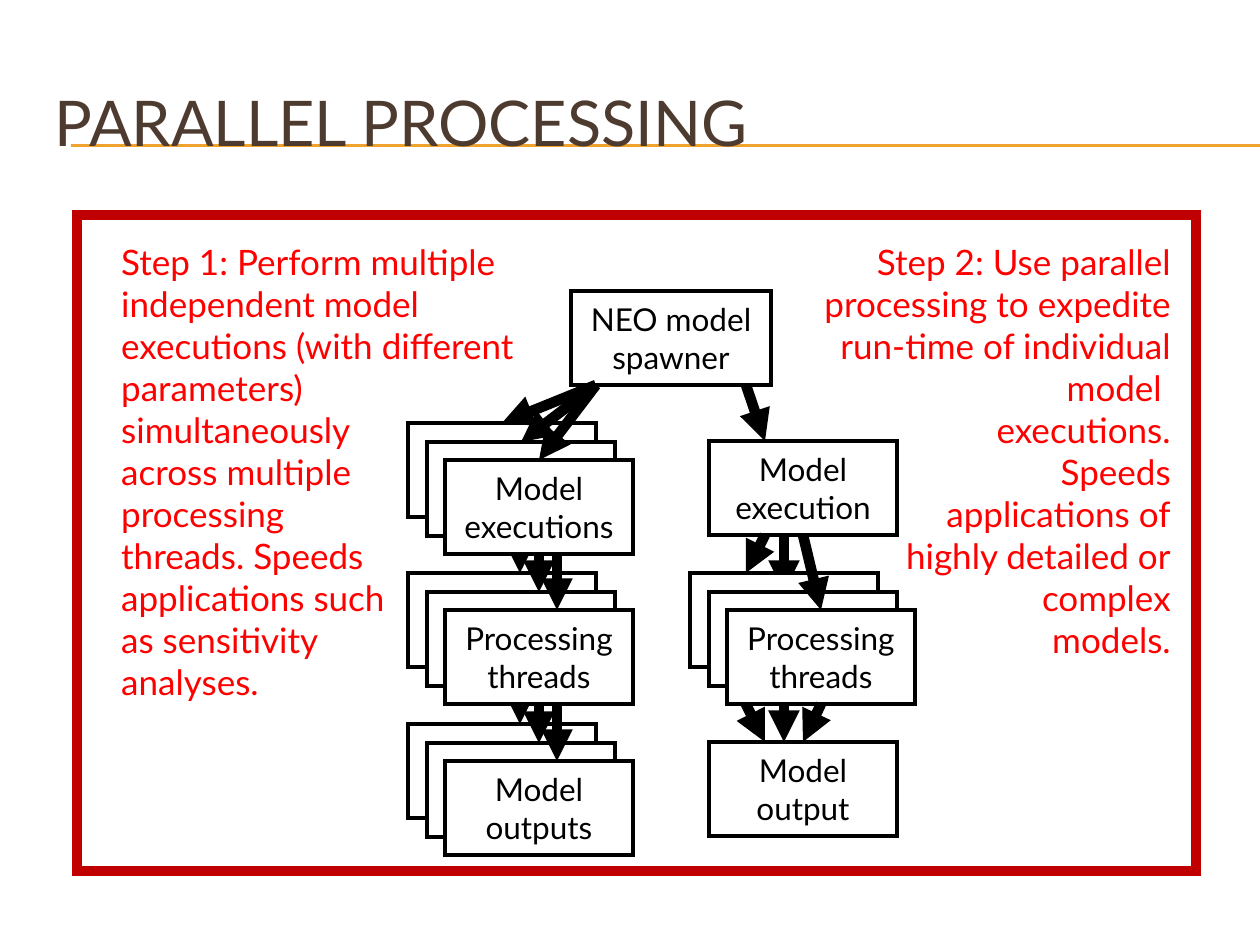
from dataclasses import dataclass

from lxml import etree
from pptx import Presentation
from pptx import util as u
from pptx.dml import color
from pptx.enum import shapes, text
from pptx.oxml import ns

EMU_PER_PX = 914400 / 126
FONT = "Lato"
BLACK, WHITE, RED = "000000", "FFFFFF", "FF0000"
FRAME_RED, GOLD, BROWN = "C00000", "F0A22E", "4E3B30"
BOX_WIDTH, BOX_HEIGHT = 188, 94
STACK_OFFSETS = (0, 19, 37)
LEFT_STACK, RIGHT_STACK = 408, 690
EXECUTIONS_TOP, THREADS_TOP, OUTPUTS_TOP = 423, 573, 724


@dataclass(frozen=True)
class Box:
    left: int
    top: int
    label: str = ""
    width: int = BOX_WIDTH
    height: int = BOX_HEIGHT
    fill: str | None = WHITE
    outline: str = BLACK
    weight: float = 2.25


@dataclass(frozen=True)
class Line:
    x1: int
    y1: int
    x2: int
    y2: int
    hue: str = BLACK
    weight: float = 6
    arrow: bool = True


@dataclass(frozen=True)
class Note:
    left: int
    top: int
    width: int
    height: int
    align: text.PP_ALIGN
    lines: tuple[str, ...]


def px(length: int) -> u.Emu:
    return u.Emu(round(length * EMU_PER_PX))


def rgb(value: str) -> color.RGBColor:
    return color.RGBColor.from_string(value)


def set_font(para, size: int, hue: str) -> None:
    para.font.name = FONT
    para.font.size = u.Pt(size)
    para.font.color.rgb = rgb(hue)


def set_line(line, hue: str, weight: float) -> None:
    line.color.rgb = rgb(hue)
    line.width = u.Pt(weight)


def draw_box(page, box: Box):
    shape = page.shapes.add_shape(
        shapes.MSO_SHAPE.RECTANGLE, px(box.left), px(box.top), px(box.width), px(box.height)
    )
    shape.shadow.inherit = False
    if box.fill:
        shape.fill.solid()
        shape.fill.fore_color.rgb = rgb(box.fill)
    else:
        shape.fill.background()
    set_line(shape.line, box.outline, box.weight)
    outline = shape.element.spPr.find(ns.qn("a:ln"))
    etree.SubElement(outline, ns.qn("a:miter"), lim="800000")
    if box.label:
        frame = shape.text_frame
        frame.word_wrap = True
        frame.vertical_anchor = text.MSO_ANCHOR.MIDDLE
        para = frame.paragraphs[0]
        para.text = box.label
        para.alignment = text.PP_ALIGN.CENTER
        set_font(para, 18, BLACK)
    return shape


def draw_stack_back(page, left: int, top: int) -> None:
    for offset in STACK_OFFSETS[:-1]:
        draw_box(page, Box(left + offset, top + offset))


def draw_stack_front(page, left: int, top: int, label: str):
    offset = STACK_OFFSETS[-1]
    return draw_box(page, Box(left + offset, top + offset, label))


def draw_line(page, line: Line):
    connector = page.shapes.add_connector(
        shapes.MSO_CONNECTOR.STRAIGHT, px(line.x1), px(line.y1), px(line.x2), px(line.y2)
    )
    set_line(connector.line, line.hue, line.weight)
    properties = connector.element.spPr
    etree.SubElement(properties, ns.qn("a:effectLst"))
    if line.arrow:
        etree.SubElement(properties.find(ns.qn("a:ln")), ns.qn("a:tailEnd"), type="triangle")
    return connector


def draw_note(page, note: Note) -> None:
    box = page.shapes.add_textbox(px(note.left), px(note.top), px(note.width), px(note.height))
    frame = box.text_frame
    frame.word_wrap = True
    frame.auto_size = text.MSO_AUTO_SIZE.SHAPE_TO_FIT_TEXT
    frame.margin_left = frame.margin_right = frame.margin_top = frame.margin_bottom = u.Inches(0.2)
    frame.text = "\n".join(note.lines)
    for para in frame.paragraphs:
        para.alignment = note.align
        set_font(para, 20, RED)


def place_title(page, label: str) -> None:
    title = page.shapes.title
    title.left, title.top, title.width, title.height = px(42), px(63), px(1197), px(116)
    frame = title.text_frame
    frame.text = label
    frame.auto_size = text.MSO_AUTO_SIZE.NONE
    frame.vertical_anchor = text.MSO_ANCHOR.MIDDLE
    para = frame.paragraphs[0]
    para.alignment = text.PP_ALIGN.LEFT
    set_font(para, 36, BROWN)
    title.element.getparent().append(title.element)


def draw_diagram(page) -> None:
    spawner = Box(571, 291, "NEO model spawner", width=200, fill=None)
    draw_box(page, spawner)

    left_tops = (EXECUTIONS_TOP, THREADS_TOP, OUTPUTS_TOP)
    for top in left_tops:
        draw_stack_back(page, LEFT_STACK, top)
    for upper, lower in zip(left_tops, left_tops[1:]):
        for offset in STACK_OFFSETS:
            x = LEFT_STACK + 112 + offset
            draw_line(page, Line(x, upper + offset + BOX_HEIGHT, x, lower + offset))

    execution = draw_box(page, Box(709, 441, "Model execution"))
    output = draw_box(page, Box(709, 742, "Model output"))
    for arrow in (
        Line(746, 385, 765, 441),
        Line(784, 535, 784, 592),
        Line(765, 535, 746, 573),
        Line(784, 686, 784, 742),
        Line(727, 667, 765, 742),
    ):
        draw_line(page, arrow)
    draw_stack_back(page, RIGHT_STACK, THREADS_TOP)
    threads = draw_stack_front(page, RIGHT_STACK, THREADS_TOP, "Processing threads")
    for start, end, line in (
        (execution, threads, Line(803, 535, 821, 610)),
        (threads, output, Line(821, 704, 803, 742)),
    ):
        connector = draw_line(page, line)
        connector.begin_connect(start, 2)
        connector.end_connect(end, 0)

    for top, label in zip(left_tops, ("Model executions", "Processing threads", "Model outputs")):
        draw_stack_front(page, LEFT_STACK, top, label)
    stack = [s for s in page.shapes if s.top in {px(EXECUTIONS_TOP + o) for o in STACK_OFFSETS}]
    for target in stack:
        draw_line(page, Line(596, 385, 502, 423)).end_connect(target, 0)


def main() -> None:
    deck = Presentation()
    deck.slide_width, deck.slide_height = u.Inches(10), u.Inches(7.5)
    page = deck.slides.add_slide(deck.slide_layouts[5])
    for y in (145, 146):
        draw_line(page, Line(71, y, 1260, y, GOLD, 0.75, arrow=False))
    draw_box(page, Box(77, 215, width=1119, height=656, outline=FRAME_RED, weight=6))
    draw_diagram(page)
    draw_note(page, Note(96, 215, 470, 517, text.PP_ALIGN.LEFT, (
        "Step 1: Perform multiple independent model executions (with different",
        "parameters)", "simultaneously", "across multiple", "processing",
        "threads. Speeds", "applications such", "as sensitivity", "analyses.",
    )))
    draw_note(page, Note(775, 215, 421, 474, text.PP_ALIGN.RIGHT, (
        "Step 2: Use parallel processing to expedite run-time of individual model ",
        "executions.", "Speeds", "applications of", "highly detailed or",
        "complex", "models.",
    )))
    place_title(page, "PARALLEL PROCESSING")
    deck.save("out.pptx")


if __name__ == "__main__":
    main()
